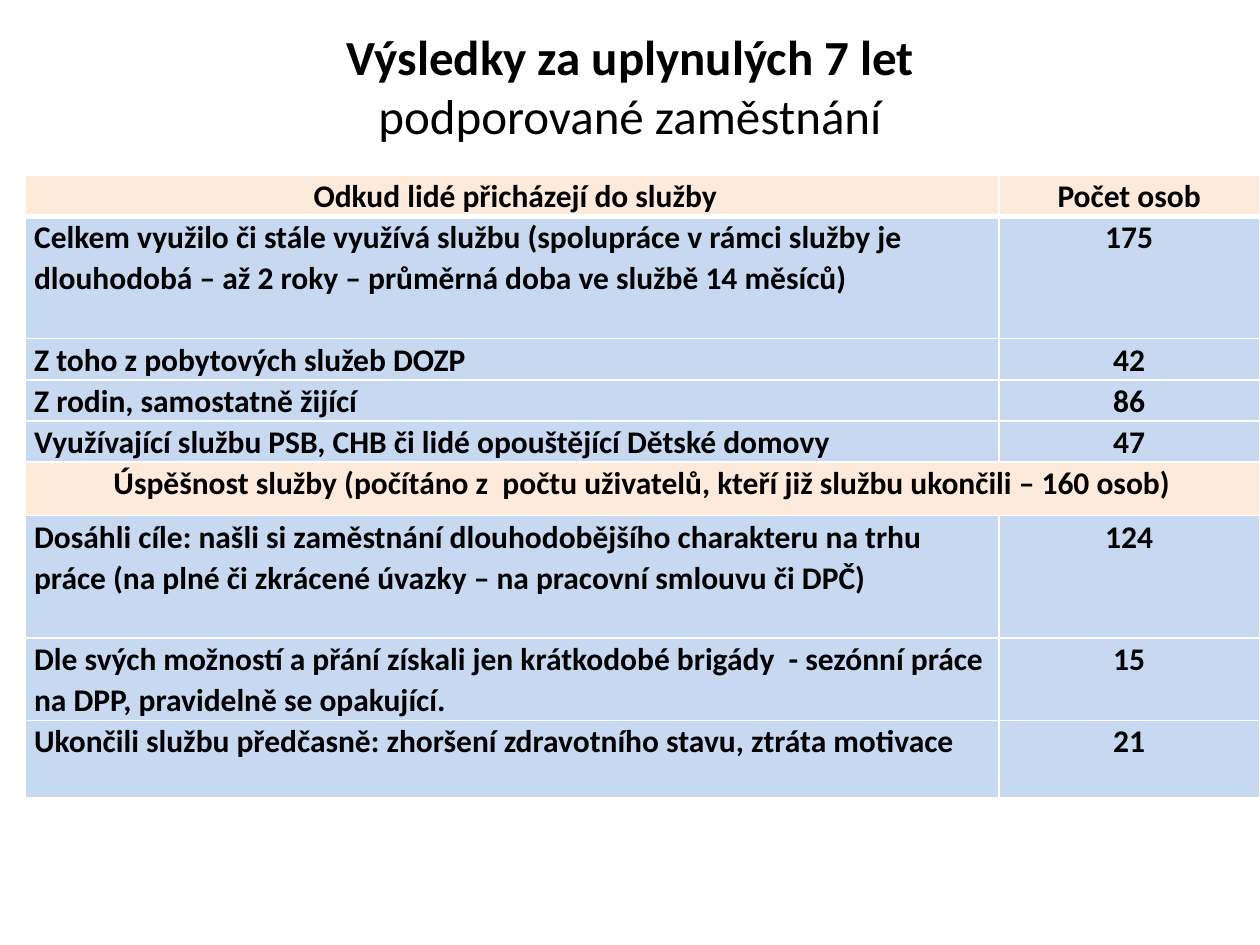
import copy

import pptx
import pptx.dml.color
import pptx.enum.text
import pptx.oxml
import pptx.oxml.ns
import pptx.util

Pt = pptx.util.Pt
ALIGN = pptx.enum.text.PP_ALIGN
ANCHOR = pptx.enum.text.MSO_ANCHOR
COLORS = {"text": "000000", "heading": "FDEADA", "body": "C6D9F1", "border": "FFFFFF"}
COLUMN_WIDTHS = (556.5, 149)
ROWS = (
    (" Odkud lidé přicházejí do služby", "Počet osob", 22.5),
    ("Celkem využilo či stále využívá službu (spolupráce v rámci služby je dlouhodobá"
     " – až 2 roky – průměrná doba ve službě 14 měsíců)", "175", 70),
    ("Z toho z pobytových služeb DOZP", "42", 22.5),
    ("Z rodin, samostatně žijící", "86", 22.5),
    ("Využívající službu PSB, CHB či lidé opouštějící Dětské domovy", "47", 22.5),
    ("Úspěšnost služby (počítáno z  počtu uživatelů, kteří již službu ukončili – 160 osob)",
     None, 30.5),
    ("Dosáhli cíle: našli si zaměstnání dlouhodobějšího charakteru na trhu práce"
     " (na plné či zkrácené úvazky – na pracovní smlouvu či DPČ)", "124", 70),
    ("Dle svých možností a přání získali jen krátkodobé brigády  - sezónní práce na DPP,"
     " pravidelně se opakující.", "15", 46),
    ("Ukončili službu předčasně: zhoršení zdravotního stavu, ztráta motivace", "21", 44),
)


def color(name):
    """Return the named colour."""
    return pptx.dml.color.RGBColor.from_string(COLORS[name])


def write(para, text, size=18, bold=True, align=ALIGN.CENTER, spacing=None):
    """Add formatted text to a paragraph and return its span."""
    para.alignment = align
    if spacing:
        para.line_spacing = spacing
    span = para.add_run()
    span.text = text
    span.font.name = "Calibri"
    span.font.size = Pt(size)
    span.font.bold = bold
    span.font.color.rgb = color("text")
    return span


def set_borders(cell, top=1, bottom=1):
    """Draw the four cell borders, with widths in points."""
    properties = cell._tc.get_or_add_tcPr()
    for side, width in (("L", 1), ("R", 1), ("T", top), ("B", bottom)):
        properties.append(pptx.oxml.parse_xml(
            f'<a:ln{side} {pptx.oxml.ns.nsdecls("a")} w="{Pt(width)}"><a:solidFill>'
            f'<a:srgbClr val="{COLORS["border"]}"/></a:solidFill></a:ln{side}>'))


def add_title(page, left, top, width, height):
    """Place the two-line title in the title placeholder."""
    box = page.shapes.title
    box.left, box.top, box.width, box.height = map(Pt, (left, top, width, height))
    frame = box.text_frame
    frame.vertical_anchor = ANCHOR.MIDDLE
    para = frame.paragraphs[0]
    first = write(para, "Výsledky za uplynulých 7 let", size=28)
    para.add_line_break()
    para._p[-1].append(copy.deepcopy(first._r.rPr))
    write(para, "podporované zaměstnání", size=28, bold=False)


def add_results(page, left, top, width, height):
    """Place the table of results, merging the rows that have no count."""
    table = page.shapes.add_table(
        len(ROWS), len(COLUMN_WIDTHS), *map(Pt, (left, top, width, height))).table
    for column, column_width in zip(table.columns, COLUMN_WIDTHS):
        column.width = Pt(column_width)
    for index, (label, count, row_height) in enumerate(ROWS):
        table.rows[index].height = Pt(row_height)
        heading = index == 0 or count is None
        for position, text in enumerate((label, count)):
            cell = table.cell(index, position)
            cell.margin_left = cell.margin_right = Pt(5.25)
            cell.margin_top = cell.margin_bottom = 0
            set_borders(cell, top=3 if index == 1 else 1, bottom=3 if index == 0 else 1)
            cell.fill.solid()
            cell.fill.fore_color.rgb = color("heading" if heading else "body")
            if text:
                centred = heading or position == 1
                write(cell.text_frame.paragraphs[0], text, spacing=1.07,
                      align=ALIGN.CENTER if centred else ALIGN.LEFT)
        if count is None:
            table.cell(index, 0).merge(table.cell(index, 1))


def main():
    """Build and save the deck."""
    deck = pptx.Presentation()
    deck.slide_width, deck.slide_height = Pt(720), Pt(540)
    page = deck.slides.add_slide(deck.slide_layouts[5])
    add_title(page, 36, 9.5, 648, 79)
    add_results(page, 14.25, 100, sum(COLUMN_WIDTHS), sum(row[2] for row in ROWS))
    deck.save("out.pptx")


if __name__ == "__main__":
    main()
